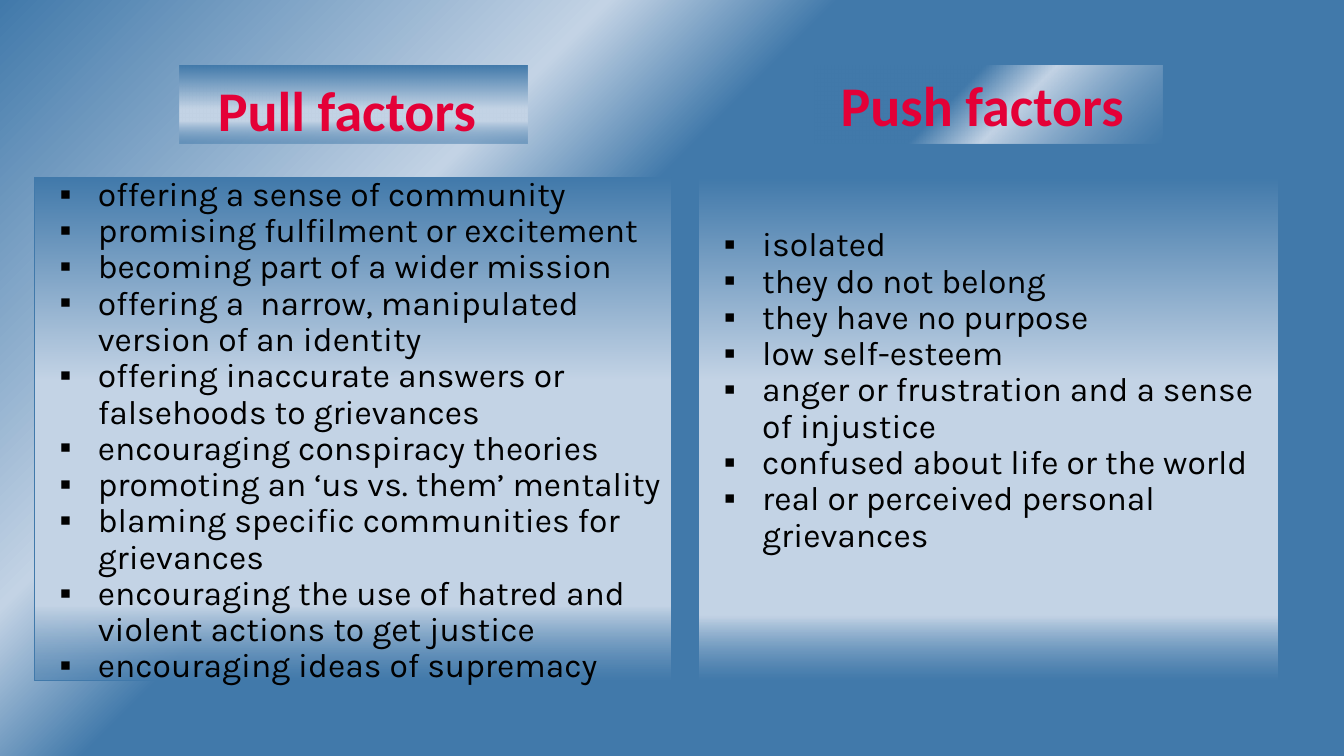
import dataclasses

import lxml.etree
import pptx
import pptx.dml.color
import pptx.enum.text
import pptx.oxml.ns
import pptx.util


@dataclasses.dataclass(frozen=True)
class Theme:
    """Colours, fonts and type sizes of the slide."""
    blue: str = "4179AA"
    pale: str = "C3D3E5"
    red: str = "E40037"
    black: str = "000000"
    heading_font: str = "Calibri"
    list_font: str = "Karla"
    heading_size: int = 40
    list_size: int = 24


THEME = Theme()
WIDTH, HEIGHT = 13.33, 7.5
HEADING_TOP, HEADING_HEIGHT, HEADING_WIDTH = 0.65, 0.77, 3.45
PANEL_TOP, PANEL_HEIGHT = 1.76, 4.99
BLUE, PALE = THEME.blue, THEME.pale

PULL_FACTORS = [
    "offering a sense of community",
    "promising fulfilment or excitement",
    "becoming part of a wider mission",
    "offering a  narrow, manipulated version of an identity",
    "offering inaccurate answers or falsehoods to grievances",
    "encouraging conspiracy theories",
    "promoting an ‘us vs. them’ mentality",
    "blaming specific communities for grievances",
    "encouraging the use of hatred and violent actions to get justice",
    "encouraging ideas of supremacy",
]
PUSH_FACTORS = [
    "isolated",
    "they do not belong",
    "they have no purpose",
    "low self-esteem",
    "anger or frustration and a sense of injustice",
    "confused about life or the world",
    "real or perceived personal grievances",
]


def paint_gradient(fill, owner, angle, stops):
    """Fill with the given stops, fading to half-transparent blue at the end."""
    qn = pptx.oxml.ns.qn
    fill.gradient()
    fill.gradient_angle = 360 - angle
    stop_list = next(owner.iter(qn("a:gsLst")))
    for stop in list(stop_list):
        stop_list.remove(stop)
    for position, colour in [*stops, (100, BLUE)]:
        stop = lxml.etree.SubElement(stop_list, qn("a:gs"), pos=str(position * 1000))
        tint = lxml.etree.SubElement(stop, qn("a:srgbClr"), val=colour)
        if position == 100:
            lxml.etree.SubElement(tint, qn("a:alpha"), val="51000")


def place(shape, box):
    """Move a shape to a box of left, top, width and height in inches."""
    shape.left, shape.top, shape.width, shape.height = map(pptx.util.Inches, box)


def set_frame(frame, anchor, top=0):
    """Give a text frame its anchor and top inset, without other insets."""
    frame.word_wrap = True
    frame.auto_size = pptx.enum.text.MSO_AUTO_SIZE.NONE
    frame.vertical_anchor = anchor
    frame.margin_left = frame.margin_right = frame.margin_bottom = 0
    frame.margin_top = pptx.util.Inches(top)


def style_runs(para, font, size, colour, bold):
    """Format every run of a paragraph."""
    for span in para.runs:
        span.font.name = font
        span.font.size = pptx.util.Pt(size)
        span.font.bold = bold
        span.font.color.rgb = pptx.dml.color.RGBColor.from_string(colour)


def add_bullet(para):
    """Give a paragraph a square bullet and a hanging indent."""
    qn = pptx.oxml.ns.qn
    properties = para._p.get_or_add_pPr()
    properties.set("marL", str(pptx.util.Inches(0.63)))
    properties.set("indent", str(pptx.util.Inches(-0.38)))
    lxml.etree.SubElement(properties, qn("a:buFont"), typeface="Arial")
    lxml.etree.SubElement(properties, qn("a:buChar"), char="▪")


def build_heading(shape, box, text, anchor, inset, angle, stops):
    """Write a column heading on its gradient plate."""
    place(shape, box)
    paint_gradient(shape.fill, shape.element, angle, stops)
    set_frame(shape.text_frame, anchor, inset)
    shape.text_frame.text = text
    para = shape.text_frame.paragraphs[0]
    para.alignment = pptx.enum.text.PP_ALIGN.CENTER
    para.space_before = pptx.util.Pt(0)
    style_runs(para, THEME.heading_font, THEME.heading_size, THEME.red, True)


def build_panel(shape, box, items, inset, stops):
    """Write a bulleted list on its gradient panel."""
    place(shape, box)
    paint_gradient(shape.fill, shape.element, 90, stops)
    shape.line.color.rgb = pptx.dml.color.RGBColor.from_string(BLUE)
    shape.line.width = pptx.util.Pt(0.75)
    set_frame(shape.text_frame, pptx.enum.text.MSO_ANCHOR.TOP, inset)
    shape.text_frame.text = "\n".join(items)
    for para in shape.text_frame.paragraphs:
        para.level = 1
        para.line_spacing = 0.9
        para.space_before = pptx.util.Pt(0)
        add_bullet(para)
        style_runs(para, THEME.list_font, THEME.list_size, THEME.black, False)


def build_factors_slide(deck):
    """Add the comparison of pull and push factors."""
    page = deck.slides.add_slide(deck.slide_layouts.get_by_name("Comparison"))
    title = page.shapes.title.element
    title.getparent().remove(title)
    paint_gradient(page.background.fill, page.element, 45,
                   [(0, BLUE), (29, PALE), (40, BLUE)])
    pull_heading, pull_panel, push_heading, push_panel = page.placeholders
    anchors = pptx.enum.text.MSO_ANCHOR
    build_heading(pull_heading, (1.78, HEADING_TOP, HEADING_WIDTH, HEADING_HEIGHT),
                  "Pull factors ", anchors.BOTTOM, 0, 90,
                  [(0, BLUE), (55, PALE), (71, PALE)])
    build_heading(push_heading, (8.08, HEADING_TOP, HEADING_WIDTH, HEADING_HEIGHT),
                  "Push factors ", anchors.TOP, 0.05, 45,
                  [(0, BLUE), (40, BLUE), (57, PALE)])
    build_panel(pull_panel, (0.34, PANEL_TOP, 6.32, PANEL_HEIGHT),
                PULL_FACTORS, 0, [(0, BLUE), (40, PALE), (85, PALE)])
    build_panel(push_panel, (6.93, PANEL_TOP, 5.75, PANEL_HEIGHT),
                PUSH_FACTORS, 0.5, [(0, BLUE), (40, PALE), (87, PALE)])


def main():
    """Build the deck and save it."""
    deck = pptx.Presentation()
    deck.slide_width = pptx.util.Inches(WIDTH)
    deck.slide_height = pptx.util.Inches(HEIGHT)
    build_factors_slide(deck)
    deck.save("out.pptx")


if __name__ == "__main__":
    main()
